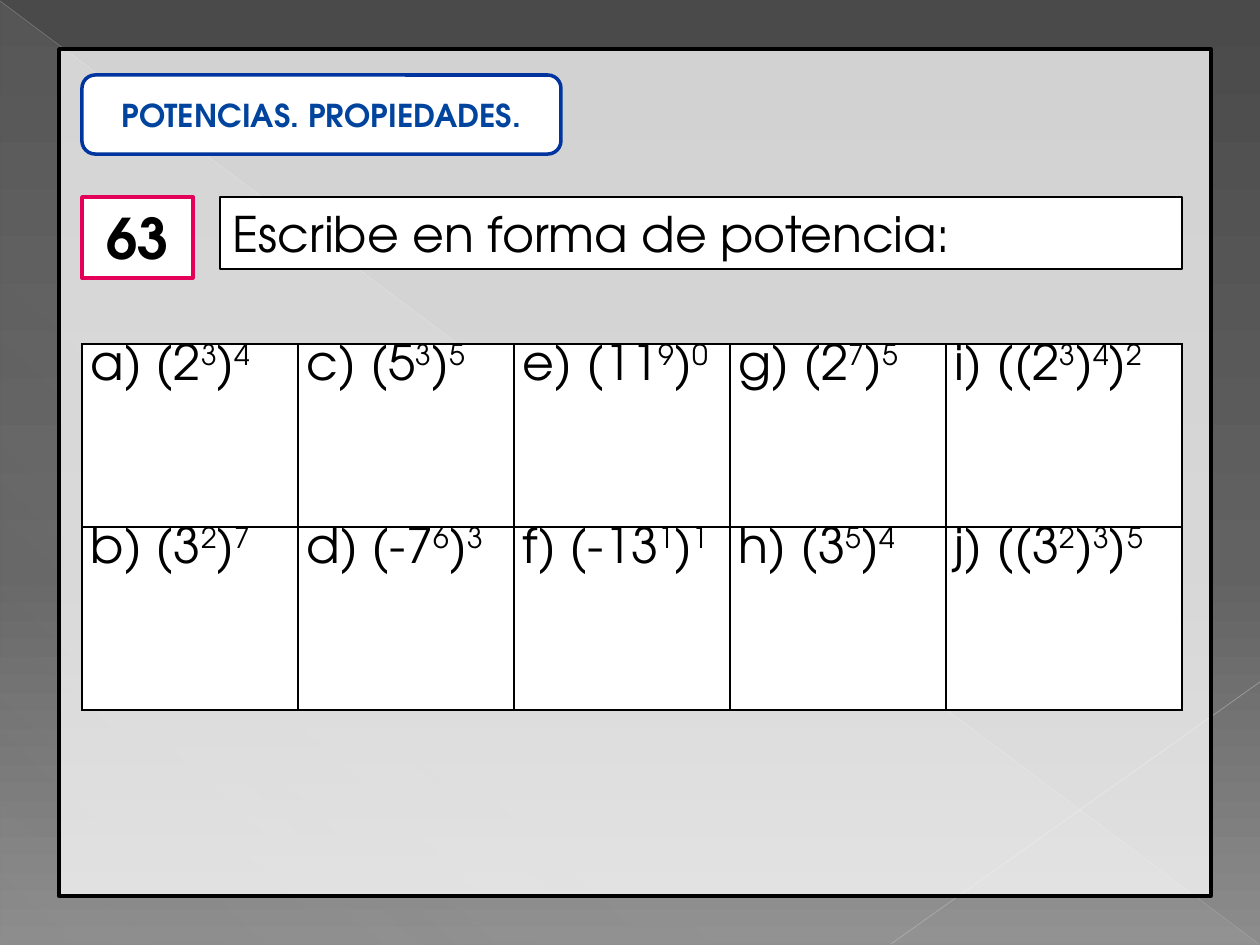
import pptx
import pptx.dml.color
import pptx.enum.shapes
import pptx.enum.text
import pptx.oxml
import pptx.oxml.ns
import pptx.util

RGBColor = pptx.dml.color.RGBColor
MSO_SHAPE = pptx.enum.shapes.MSO_SHAPE
PP_ALIGN = pptx.enum.text.PP_ALIGN
MSO_ANCHOR = pptx.enum.text.MSO_ANCHOR
qn = pptx.oxml.ns.qn

PX = 914400 // 126
FONT = "TeX Gyre Adventor"
NAMESPACE = pptx.oxml.ns.nsdecls("a")

BLACK = RGBColor(0x00, 0x00, 0x00)
WHITE = RGBColor(0xFF, 0xFF, 0xFF)
PINK = RGBColor(0xE4, 0x00, 0x59)
BLUE = RGBColor(0x00, 0x34, 0x9E)
TITLE_BLUE = RGBColor(0x00, 0x44, 0x9E)
RAY_GRAY = RGBColor(0xBF, 0xBF, 0xBF)
PALE_RAY_GRAY = RGBColor(0xC6, 0xC6, 0xC6)
SHEEN = RGBColor(0xD2, 0xD2, 0xD2)
DARK_GRAY = RGBColor(0x4A, 0x4A, 0x4A)
MID_GRAY = RGBColor(0x62, 0x62, 0x62)
LIGHT_GRAY = RGBColor(0x8C, 0x8C, 0x8C)

# Each "^" raises the one digit that follows it.
EXERCISES = [
    ["a) (2^3)^4", "c) (5^3)^5", "e) (11^9)^0", "g) (2^7)^5", "i) ((2^3)^4)^2"],
    ["b) (3^2)^7", "d) (-7^6)^3", "f) (-13^1)^1", "h) (3^5)^4", "j) ((3^2)^3)^5"],
]
COLUMN_WIDTHS = [216, 216, 216, 216, 236]
ROW_HEIGHT = 183


def px(*lengths):
    return [length * PX for length in lengths]


def set_alpha(element, percent):
    """Make the first solid colour inside the element partly transparent."""
    color = element.find(".//" + qn("a:srgbClr"))
    color.append(pptx.oxml.parse_xml(f'<a:alpha {NAMESPACE} val="{percent * 1000}"/>'))


def set_gradient(fill, owner, stops, angle):
    """Fill with (position, colour, opacity) stops, all in percent."""
    fill.gradient()
    gradient = owner.find(".//" + qn("a:gradFill"))
    for child in list(gradient):
        gradient.remove(child)
    stop_xml = "".join(
        f'<a:gs pos="{position * 1000}"><a:srgbClr val="{color}">'
        f'<a:alpha val="{opacity * 1000}"/></a:srgbClr></a:gs>'
        for position, color, opacity in stops
    )
    gradient.append(pptx.oxml.parse_xml(f"<a:gsLst {NAMESPACE}>{stop_xml}</a:gsLst>"))
    gradient.append(
        pptx.oxml.parse_xml(f'<a:lin {NAMESPACE} ang="{angle * 60000}" scaled="0"/>')
    )


def add_run(paragraph, text, size, color=BLACK, bold=False):
    run = paragraph.add_run()
    run.text = text
    formats = {"name": FONT, "size": pptx.util.Pt(size), "bold": bold}
    for name, value in formats.items():
        setattr(run.font, name, value)
    run.font.color.rgb = color
    return run


def add_box(slide, kind, box, line_color, line_width):
    shape = slide.shapes.add_shape(kind, *px(*box))
    shape.shadow.inherit = False
    shape.fill.solid()
    shape.fill.fore_color.rgb = WHITE
    shape.line.color.rgb = line_color
    shape.line.width = pptx.util.Pt(line_width)
    return shape


def write_label(shape, text, size, color=BLACK, bold=False,
                align=PP_ALIGN.CENTER, anchor=MSO_ANCHOR.TOP):
    frame = shape.text_frame
    frame.word_wrap = True
    frame.vertical_anchor = anchor
    paragraph = frame.paragraphs[0]
    paragraph.alignment = align
    add_run(paragraph, text, size, color, bold)


def add_ray(slide, ends, color, width, opacity):
    ray = slide.shapes.add_connector(
        pptx.enum.shapes.MSO_CONNECTOR.STRAIGHT, *px(*ends)
    )
    ray.line.color.rgb = color
    ray.line.width = pptx.util.Pt(width)
    properties = ray._element.spPr
    set_alpha(properties, opacity)
    properties.append(pptx.oxml.parse_xml(f"<a:effectLst {NAMESPACE}/>"))


def add_backdrop(slide):
    set_gradient(
        slide.background.fill,
        slide._element,
        [(0, DARK_GRAY, 100), (60, MID_GRAY, 100), (100, LIGHT_GRAY, 100)],
        90,
    )
    triangle = slide.shapes.add_shape(MSO_SHAPE.RIGHT_TRIANGLE, *px(1, 2, 1258, 942))
    triangle.shadow.inherit = False
    triangle.line.fill.background()
    set_gradient(
        triangle.fill,
        triangle._element.spPr,
        [(0, SHEEN, 10), (70, SHEEN, 8), (100, SHEEN, 1)],
        133,
    )
    add_ray(slide, (0, 1, 1259, 944), RAY_GRAY, 0.39, 35)
    add_ray(slide, (1260, 682, 891, 944), PALE_RAY_GRAY, 0.47, 45)
    panel = add_box(slide, MSO_SHAPE.RECTANGLE, (59, 49, 1152, 847), BLACK, 2)
    set_alpha(panel._element.spPr, 75)


def add_power(paragraph, expression):
    base, *raised = expression.split("^")
    add_run(paragraph, base, 28)
    for part in raised:
        exponent = add_run(paragraph, part[0], 28)
        exponent.font._element.set("baseline", "30000")
        if part[1:]:
            add_run(paragraph, part[1:], 28)


def set_borders(cell):
    properties = cell._tc.get_or_add_tcPr()
    for index, side in enumerate(("lnL", "lnR", "lnT", "lnB")):
        border = pptx.oxml.parse_xml(
            f'<a:{side} {NAMESPACE} w="12700"><a:solidFill>'
            f'<a:srgbClr val="{BLACK}"/></a:solidFill></a:{side}>'
        )
        properties.insert(index, border)


def add_exercise_table(slide):
    row_count, column_count = len(EXERCISES), len(COLUMN_WIDTHS)
    box = px(82, 344, sum(COLUMN_WIDTHS), ROW_HEIGHT * row_count)
    table = slide.shapes.add_table(row_count, column_count, *box).table
    table.first_row = False
    table.horz_banding = False
    for column, width in zip(table.columns, COLUMN_WIDTHS):
        column.width = width * PX
    margins = {"margin_left": 9, "margin_right": 9, "margin_top": 0, "margin_bottom": 0}
    for row, expressions in zip(table.rows, EXERCISES):
        row.height = ROW_HEIGHT * PX
        for cell, expression in zip(row.cells, expressions):
            for name, length in margins.items():
                setattr(cell, name, length * PX)
            cell.fill.solid()
            cell.fill.fore_color.rgb = WHITE
            set_borders(cell)
            add_power(cell.text_frame.paragraphs[0], expression)


def main():
    presentation = pptx.Presentation()
    presentation.slide_width, presentation.slide_height = px(1260, 945)
    slide = presentation.slides.add_slide(presentation.slide_layouts[6])
    add_backdrop(slide)

    number = add_box(slide, MSO_SHAPE.RECTANGLE, (82, 197, 111, 81), PINK, 2)
    write_label(number, "63", 32, bold=True)
    task = add_box(slide, MSO_SHAPE.RECTANGLE, (220, 197, 962, 72), BLACK, 0.75)
    write_label(task, "Escribe en forma de potencia:", 28, align=PP_ALIGN.LEFT)
    title = add_box(slide, MSO_SHAPE.ROUNDED_RECTANGLE, (82, 75, 479, 79), BLUE, 2)
    write_label(title, "POTENCIAS. PROPIEDADES.", 18, TITLE_BLUE, bold=True,
                anchor=MSO_ANCHOR.MIDDLE)

    add_exercise_table(slide)
    presentation.save("out.pptx")


if __name__ == "__main__":
    main()
